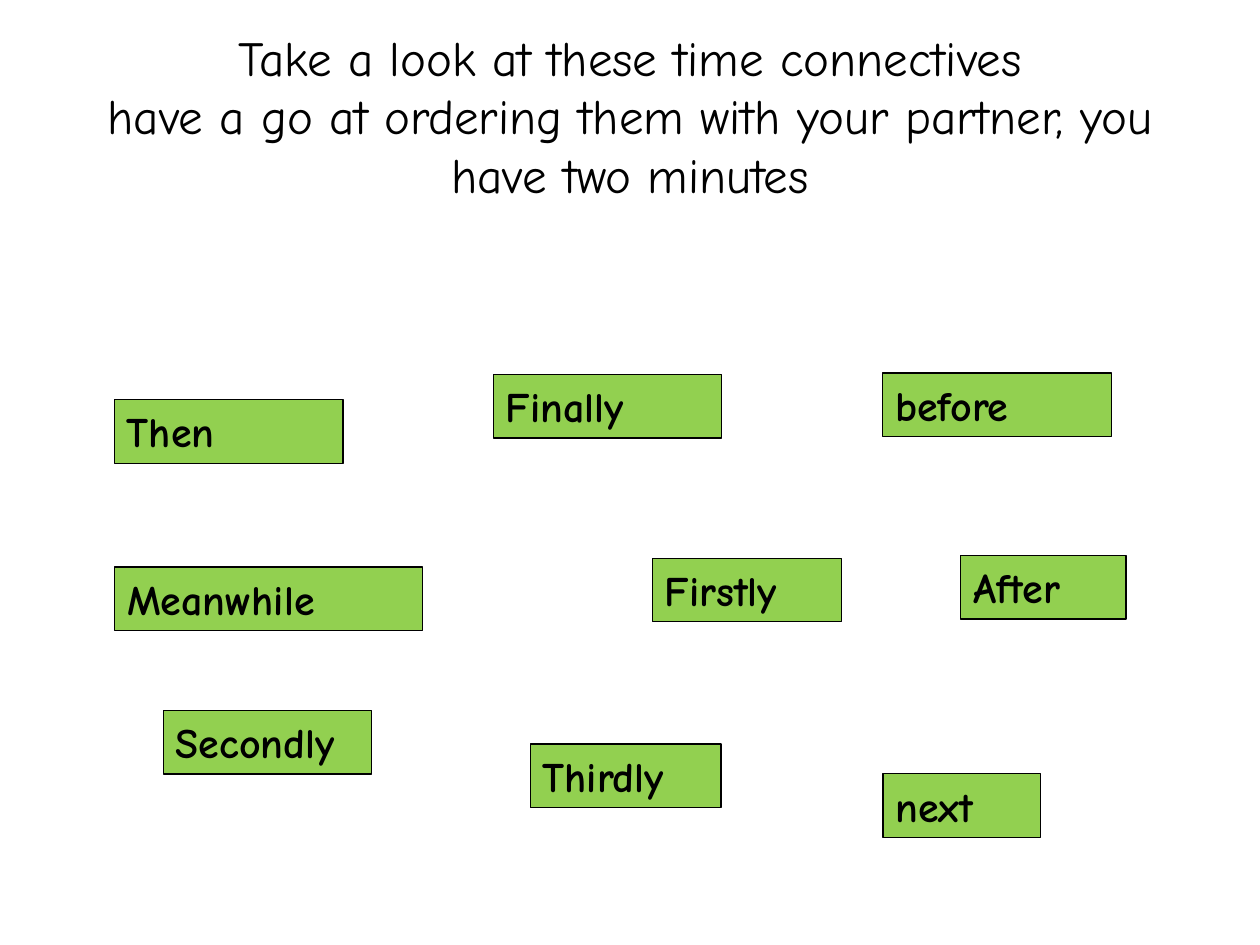
from pptx import Presentation
from pptx.dml.color import RGBColor
from pptx.enum.shapes import MSO_SHAPE
from pptx.enum.text import MSO_ANCHOR, MSO_AUTO_SIZE, PP_ALIGN
from pptx.util import Pt

RECTANGLE = MSO_SHAPE.RECTANGLE
MIDDLE, TOP = MSO_ANCHOR.MIDDLE, MSO_ANCHOR.TOP
LEFT, CENTER = PP_ALIGN.LEFT, PP_ALIGN.CENTER
NO_FIT, GROW = MSO_AUTO_SIZE.NONE, MSO_AUTO_SIZE.SHAPE_TO_FIT_TEXT

BLACK = RGBColor(0x00, 0x00, 0x00)
GREEN = RGBColor(0x92, 0xD0, 0x50)
FONT = "Comic Neue"
CARD_HEIGHT = 36.35

TITLE_LINES = [
    "Take a look at these time connectives",
    "have a go at ordering them with your partner, you have two minutes",
]

# word, left, top, width
CARDS = [
    ("Meanwhile", 65.5, 324, 176),
    ("After", 549, 317.5, 94.5),
    ("next", 504.5, 442.2, 90),
    ("Thirdly", 303, 425.2, 109),
    ("Secondly", 93.4, 406, 119),
    ("Firstly", 372.8, 319, 108),
    ("Then", 65.5, 228.4, 130.5),
    ("Finally", 282, 214, 130.5),
    ("before", 504.5, 213.2, 130.5),
]


def add_run(paragraph, text, size, bold):
    run = paragraph.add_run()
    run.text = text
    run.font.name = FONT
    run.font.size = Pt(size)
    run.font.bold = bold
    run.font.color.rgb = BLACK


def add_title(slide):
    title = slide.shapes.title
    title.left, title.top, title.width, title.height = Pt(36), Pt(9.4), Pt(648), Pt(113)
    frame = title.text_frame
    frame.word_wrap = True
    frame.auto_size = NO_FIT
    frame.vertical_anchor = MIDDLE
    paragraph = frame.paragraphs[0]
    paragraph.alignment = CENTER
    for index, line in enumerate(TITLE_LINES):
        if index:
            paragraph.add_line_break()
        add_run(paragraph, line, 28, False)


def add_card(slide, word, left, top, width):
    card = slide.shapes.add_shape(RECTANGLE, Pt(left), Pt(top), Pt(width), Pt(CARD_HEIGHT))
    card.shadow.inherit = False
    card.fill.solid()
    card.fill.fore_color.rgb = GREEN
    card.line.color.rgb = BLACK
    card.line.width = Pt(0.75)
    frame = card.text_frame
    frame.word_wrap = True
    frame.auto_size = GROW
    frame.vertical_anchor = TOP
    paragraph = frame.paragraphs[0]
    paragraph.alignment = LEFT
    add_run(paragraph, word, 24, True)


def main():
    presentation = Presentation()
    presentation.slide_width, presentation.slide_height = Pt(720), Pt(540)
    slide = presentation.slides.add_slide(presentation.slide_layouts[5])
    add_title(slide)
    for card in CARDS:
        add_card(slide, *card)
    presentation.save("out.pptx")


if __name__ == "__main__":
    main()
